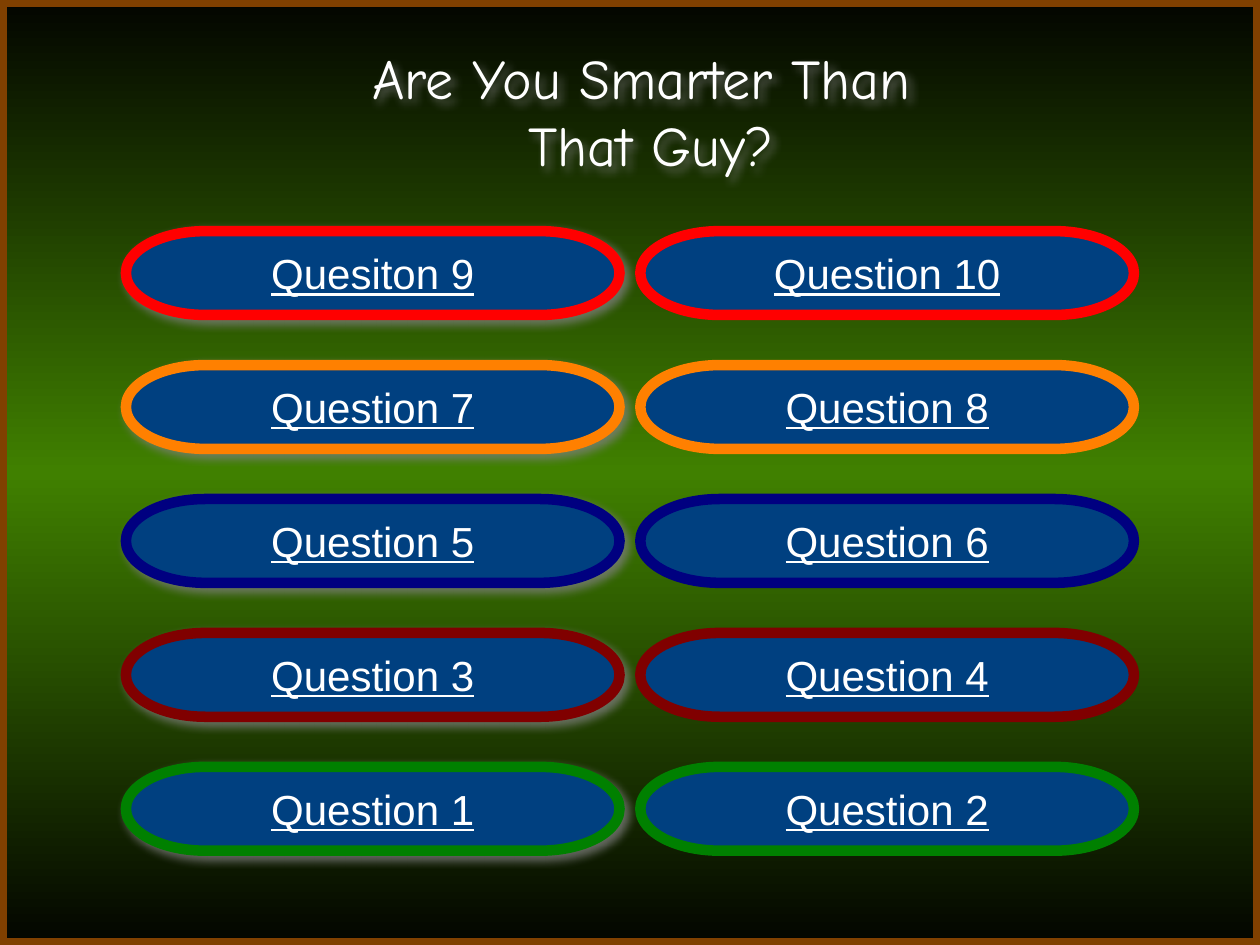
from copy import deepcopy
from pptx import Presentation
from pptx import util as u
from pptx.dml.color import RGBColor
from pptx.enum import shapes, text
from pptx.oxml import parse_xml
from pptx.oxml.ns import nsdecls, qn

TITLE = ["Are You Smarter Than ", "That Guy?"]
ROWS = [
    ("FF0000", "Quesiton 9", "Question 10"),
    ("FF8000", "Question 7", "Question 8"),
    ("000080", "Question 5", "Question 6"),
    ("800000", "Question 3", "Question 4"),
    ("008000", "Question 1", "Question 2"),
]
STOPS = [(0, "030500"), (0.5, "408000"), (1, "030500")]
WIDTH, HEIGHT = 25.4, 19.05
LEFT, TOP = 2.54, 4.66
BUTTON_W, BUTTON_H = 9.95, 1.69
COLUMN_STEP, ROW_STEP = 10.37, 2.7


def color(value):
    return RGBColor.from_string(value)


def paint_background(s):
    fill = s.background.fill
    fill.gradient()
    fill.gradient_angle = 270
    stop_list = next(s._element.iter(qn("a:gsLst")))
    stop_list.insert(1, deepcopy(stop_list[0]))
    for stop, (position, value) in zip(fill.gradient_stops, STOPS):
        stop.position = position
        stop.color.rgb = color(value)


def add_shadow(sp):
    sp.shadow.inherit = False
    effects = sp._element.spPr.find(qn("a:effectLst"))
    effects.append(parse_xml(
        f'<a:outerShdw {nsdecls("a")} blurRad="63500" dist="38100" dir="2700000">'
        '<a:srgbClr val="808080"><a:alpha val="75000"/></a:srgbClr></a:outerShdw>'))


def write(sp, lines, font, size, underline=False, wrap=True):
    tf = sp.text_frame
    tf.word_wrap = wrap
    tf.vertical_anchor = text.MSO_ANCHOR.MIDDLE
    p = tf.paragraphs[0]
    p.alignment = text.PP_ALIGN.CENTER
    for i, line in enumerate(lines):
        if i:
            p.add_line_break()
        r = p.add_run()
        r.text = line
        r.font.name = font
        r.font.size = u.Pt(size)
        r.font.underline = underline
        r.font.color.rgb = color("FFFFFF")


def add_shape(s, kind, box, line, weight, fill=None):
    sp = s.shapes.add_shape(kind, *map(u.Cm, box))
    sp.shadow.inherit = False
    if fill:
        sp.fill.solid()
        sp.fill.fore_color.rgb = color(fill)
    else:
        sp.fill.background()
    sp.line.color.rgb = color(line)
    sp.line.width = u.Pt(weight)
    return sp


def main():
    prs = Presentation()
    prs.slide_width, prs.slide_height = u.Cm(WIDTH), u.Cm(HEIGHT)
    s = prs.slides.add_slide(prs.slide_layouts[6])
    paint_background(s)

    title = s.shapes.add_textbox(u.Cm(3.6), u.Cm(0.64), u.Cm(19.05), u.Cm(3.18))
    write(title, TITLE, "Comic Neue", 32)
    add_shadow(title)

    for row, (outline, *labels) in enumerate(ROWS):
        for column, label in enumerate(labels):
            box = (LEFT + column * COLUMN_STEP, TOP + row * ROW_STEP, BUTTON_W, BUTTON_H)
            button = add_shape(s, shapes.MSO_SHAPE.FLOWCHART_TERMINATOR, box, outline, 6, "004080")
            write(button, [label], "Arial", 24, underline=True, wrap=False)
            if column == 0:
                add_shadow(button)

    add_shape(s, shapes.MSO_SHAPE.RECTANGLE, (0, 0, WIDTH, HEIGHT), "804000", 8)
    prs.save("out.pptx")


if __name__ == "__main__":
    main()
